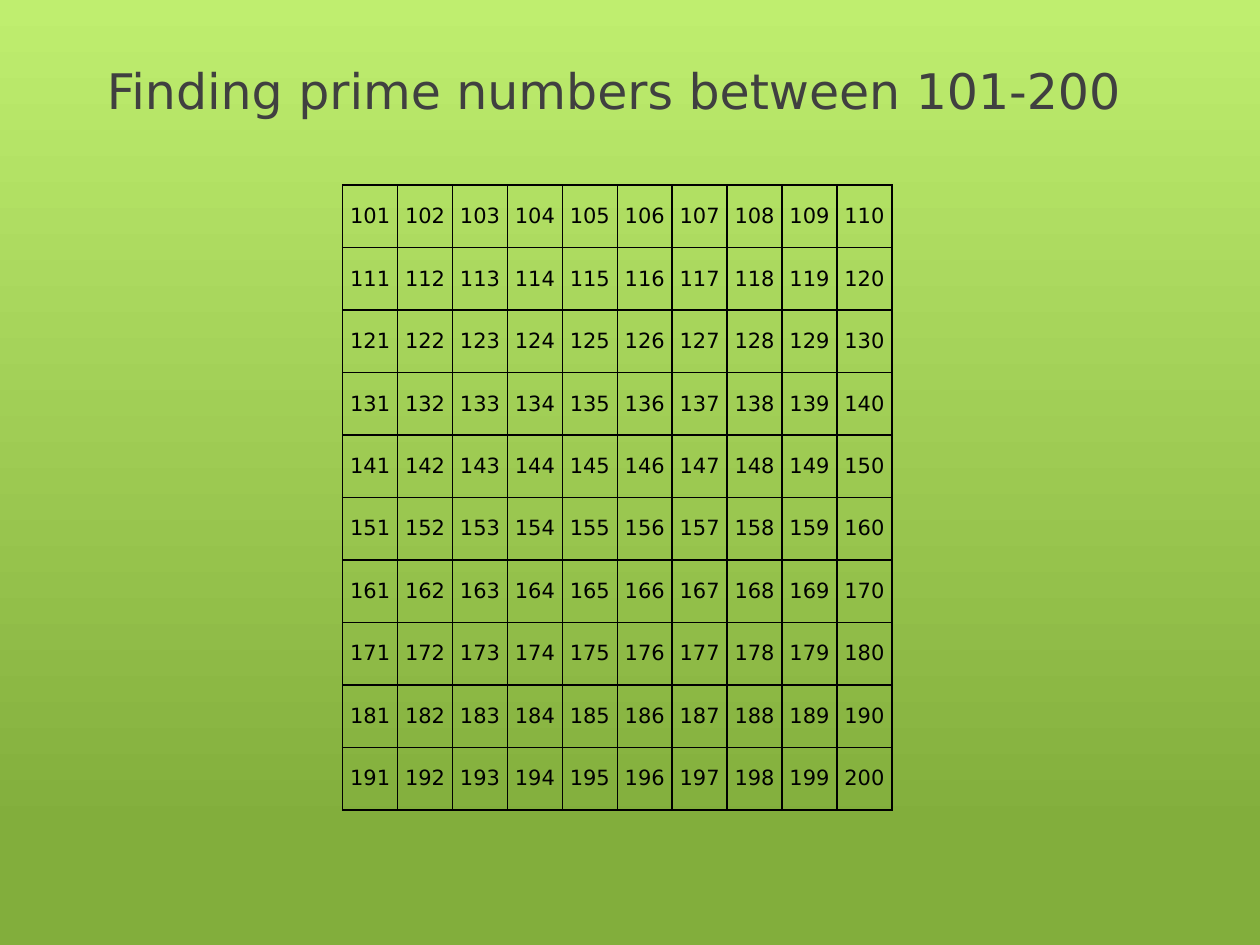
from dataclasses import dataclass

import lxml.etree
import pptx
import pptx.dml.color
import pptx.enum.text
import pptx.oxml.ns
import pptx.util

SLIDE_WIDTH = pptx.util.Inches(10)
SLIDE_HEIGHT = pptx.util.Inches(7.5)
FONT = "DejaVu Sans"
FIRST_NUMBER = 101
GRID_SIZE = 10
COLUMN_WIDTH = pptx.util.Inches(4.36) // GRID_SIZE
ROW_HEIGHT = pptx.util.Inches(4.96) // GRID_SIZE


@dataclass(frozen=True)
class TextStyle:
    size: float
    color: str
    align: pptx.enum.text.PP_ALIGN


@dataclass(frozen=True)
class GradientStop:
    position: float
    color: str


TITLE_STYLE = TextStyle(28, "404040", pptx.enum.text.PP_ALIGN.LEFT)
NUMBER_STYLE = TextStyle(12, "000000", pptx.enum.text.PP_ALIGN.CENTER)
BACKGROUND_STOPS = (GradientStop(0, "BFEE6F"), GradientStop(0.88, "82AE3C"))


def rgb(color: str) -> pptx.dml.color.RGBColor:
    return pptx.dml.color.RGBColor.from_string(color)


def across(share: float) -> int:
    return round(SLIDE_WIDTH * share)


def down(share: float) -> int:
    return round(SLIDE_HEIGHT * share)


def write(text_frame, text: str, style: TextStyle) -> None:
    paragraph = text_frame.paragraphs[0]
    paragraph.alignment = style.align
    run = paragraph.add_run()
    run.text = text
    run.font.name = FONT
    run.font.size = pptx.util.Pt(style.size)
    run.font.color.rgb = rgb(style.color)


def paint_background(slide) -> None:
    fill = slide.background.fill
    fill.gradient()
    fill.gradient_angle = 270
    for stop, wanted in zip(fill.gradient_stops, BACKGROUND_STOPS):
        stop.position = wanted.position
        stop.color.rgb = rgb(wanted.color)


def add_title(slide, text: str) -> None:
    title = slide.shapes.add_textbox(across(0.075), down(0.03), across(0.84), down(0.13))
    title.text_frame.word_wrap = True
    title.text_frame.vertical_anchor = pptx.enum.text.MSO_ANCHOR.MIDDLE
    write(title.text_frame, text, TITLE_STYLE)


def add_borders(cell, color: str, width: float) -> None:
    qn = pptx.oxml.ns.qn
    properties = cell._tc.get_or_add_tcPr()
    for side in ("a:lnL", "a:lnR", "a:lnT", "a:lnB"):
        line = lxml.etree.SubElement(properties, qn(side), w=str(pptx.util.Pt(width)))
        solid = lxml.etree.SubElement(line, qn("a:solidFill"))
        lxml.etree.SubElement(solid, qn("a:srgbClr"), val=color)


def fill_number_cell(cell, number: int) -> None:
    add_borders(cell, "000000", 1)
    cell.fill.background()
    cell.margin_left = cell.margin_right = pptx.util.Inches(0.04)
    cell.margin_top = cell.margin_bottom = pptx.util.Inches(0.05)
    cell.vertical_anchor = pptx.enum.text.MSO_ANCHOR.MIDDLE
    write(cell.text_frame, str(number), NUMBER_STYLE)


def add_number_grid(slide) -> None:
    grid = slide.shapes.add_table(
        GRID_SIZE, GRID_SIZE, across(0.272), down(0.196),
        COLUMN_WIDTH * GRID_SIZE, ROW_HEIGHT * GRID_SIZE,
    ).table
    grid.first_row = False
    grid.horz_banding = False
    for number, cell in enumerate(grid.iter_cells(), FIRST_NUMBER):
        fill_number_cell(cell, number)


def main() -> None:
    presentation = pptx.Presentation()
    presentation.slide_width = SLIDE_WIDTH
    presentation.slide_height = SLIDE_HEIGHT
    slide = presentation.slides.add_slide(presentation.slide_layouts[6])
    paint_background(slide)
    add_title(slide, "Finding prime numbers between 101-200")
    add_number_grid(slide)
    presentation.save("out.pptx")


if __name__ == "__main__":
    main()
